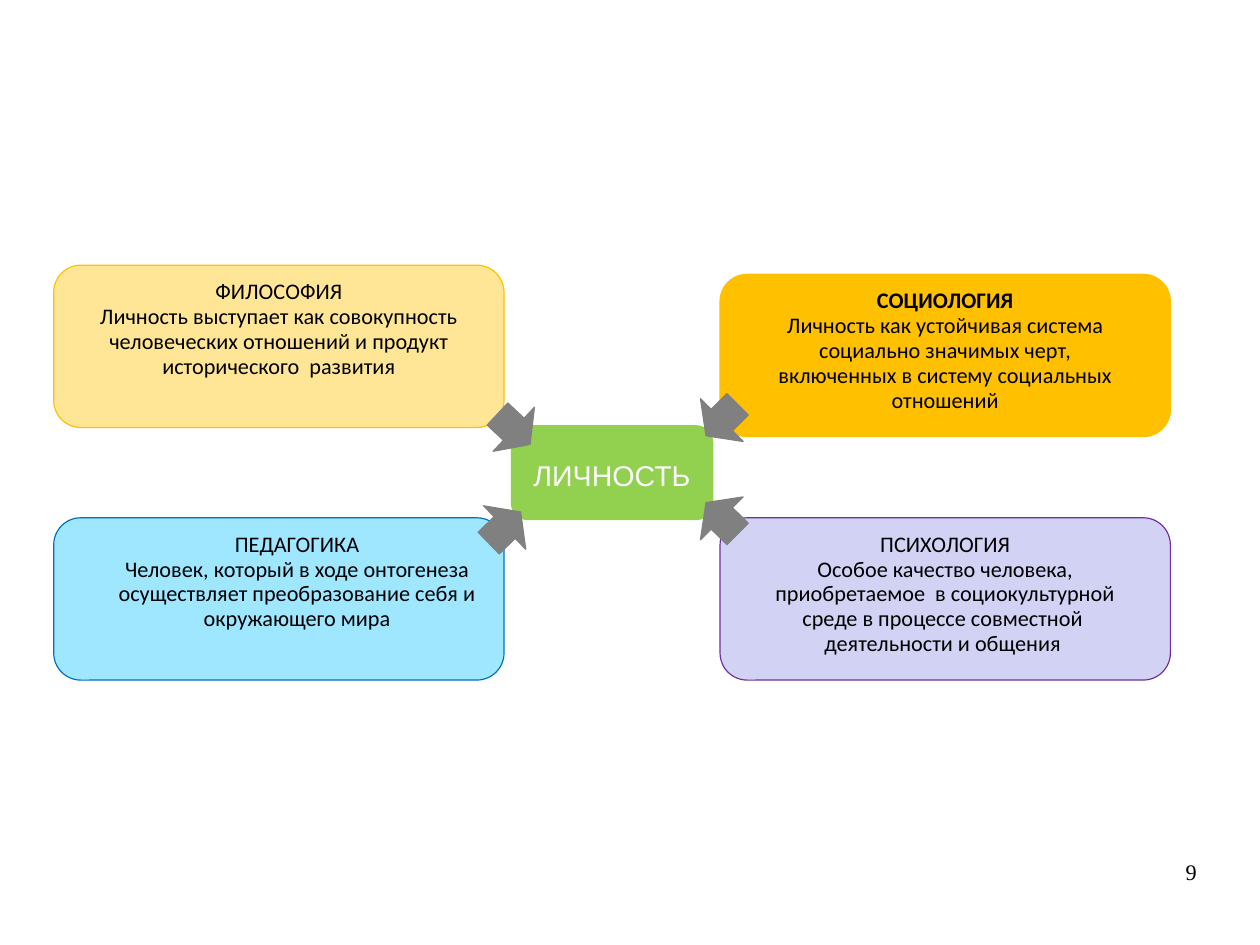
from pptx import Presentation
from pptx.dml.color import RGBColor
from pptx.enum import shapes, text
from pptx.util import Cm, Inches, Pt

SLIDE_SIZE_CM = (28, 21)
CARD_SIZE = (3.94, 1.42)
ARROW_SIZE = (0.53, 0.39)
HUB = ("ЛИЧНОСТЬ", 4.49, 3.74, 1.73, 0.79)
PAGE_NUMBER = ("9", 7.9, 7.53, 2.57, 0.57)

CARDS = [
    {"title": "ПСИХОЛОГИЯ", "bold": False, "at": (6.3, 4.53), "sides": (0.27, 0.27),
     "fill": "D2D2F4", "line": "7030A0",
     "body": "Особое качество человека, приобретаемое  в социокультурной среде "
             "в процессе совместной  деятельности и общения "},
    {"title": "СОЦИОЛОГИЯ", "bold": True, "at": (6.3, 2.4), "sides": (0.27, 0.27),
     "fill": "FFC000", "line": "FFC000",
     "body": "Личность как устойчивая система социально значимых черт, "
             "включенных в систему социальных отношений"},
    {"title": "ПЕДАГОГИКА", "bold": False, "at": (0.47, 4.53), "sides": (0.43, 0.11),
     "fill": "9FE6FF", "line": "0070C0",
     "body": "Человек, который в ходе онтогенеза осуществляет "
             "преобразование себя и окружающего мира"},
    {"title": "ФИЛОСОФИЯ", "bold": False, "at": (0.47, 2.32), "sides": (0.27, 0.27),
     "fill": "FFE697", "line": "FFC000",
     "body": "Личность выступает как совокупность человеческих отношений "
             "и продукт исторического  развития"},
]

ARROWS = [(6.05, 3.48, 45.1), (6.05, 4.34, 134.9), (4.23, 3.56, 313.1), (4.15, 4.42, 225.8)]


def color(value):
    return RGBColor.from_string(value)


def add_figure(slide, kind, left, top, size, fill, line, line_width=0.75):
    shape = slide.shapes.add_shape(kind, Inches(left), Inches(top), *map(Inches, size))
    shape.shadow.inherit = False
    shape.fill.solid()
    shape.fill.fore_color.rgb = color(fill)
    shape.line.color.rgb = color(line)
    shape.line.width = Pt(line_width)
    return shape


def set_frame(shape, margins, anchor=text.MSO_ANCHOR.TOP):
    frame = shape.text_frame
    frame.word_wrap = True
    frame.vertical_anchor = anchor
    (frame.margin_left, frame.margin_top,
     frame.margin_right, frame.margin_bottom) = map(Inches, margins)
    return frame


def write(paragraph, words, font, size, ink="000000", bold=False,
          align=text.PP_ALIGN.CENTER, spacing=0.93):
    paragraph.alignment = align
    paragraph.line_spacing = spacing
    run = paragraph.add_run()
    run.text = words
    run.font.name = font
    run.font.size = Pt(size)
    run.font.bold = bold
    run.font.color.rgb = color(ink)


def add_card(slide, card):
    shape = add_figure(slide, shapes.MSO_SHAPE.ROUNDED_RECTANGLE, *card["at"],
                       CARD_SIZE, card["fill"], card["line"])
    left, right = card["sides"]
    frame = set_frame(shape, (left, 0.06, right, 0))
    write(frame.paragraphs[0], card["title"], "Calibri", 14, bold=card["bold"])
    write(frame.add_paragraph(), card["body"], "Calibri", 14)


def add_hub(slide):
    words, left, top, *size = HUB
    shape = add_figure(slide, shapes.MSO_SHAPE.ROUNDED_RECTANGLE, left, top, size,
                       "92D050", "92D050", 3)
    frame = set_frame(shape, (0, 0.07, 0, 0), text.MSO_ANCHOR.MIDDLE)
    write(frame.paragraphs[0], words, "Arial", 18, "FFFFFF")


def add_page_number(slide):
    words, *box = PAGE_NUMBER
    shape = slide.shapes.add_textbox(*map(Inches, box))
    frame = set_frame(shape, (0, 0, 0, 0))
    write(frame.paragraphs[0], words, "Times New Roman", 14,
          align=text.PP_ALIGN.RIGHT, spacing=0.95)


def main():
    presentation = Presentation()
    presentation.slide_width, presentation.slide_height = map(Cm, SLIDE_SIZE_CM)
    slide = presentation.slides.add_slide(presentation.slide_layouts[6])
    for card in CARDS:
        add_card(slide, card)
    add_hub(slide)
    for left, top, angle in ARROWS:
        arrow = add_figure(slide, shapes.MSO_SHAPE.DOWN_ARROW, left, top,
                           ARROW_SIZE, "808080", "808080")
        arrow.rotation = angle
    add_page_number(slide)
    presentation.save("out.pptx")


if __name__ == "__main__":
    main()
